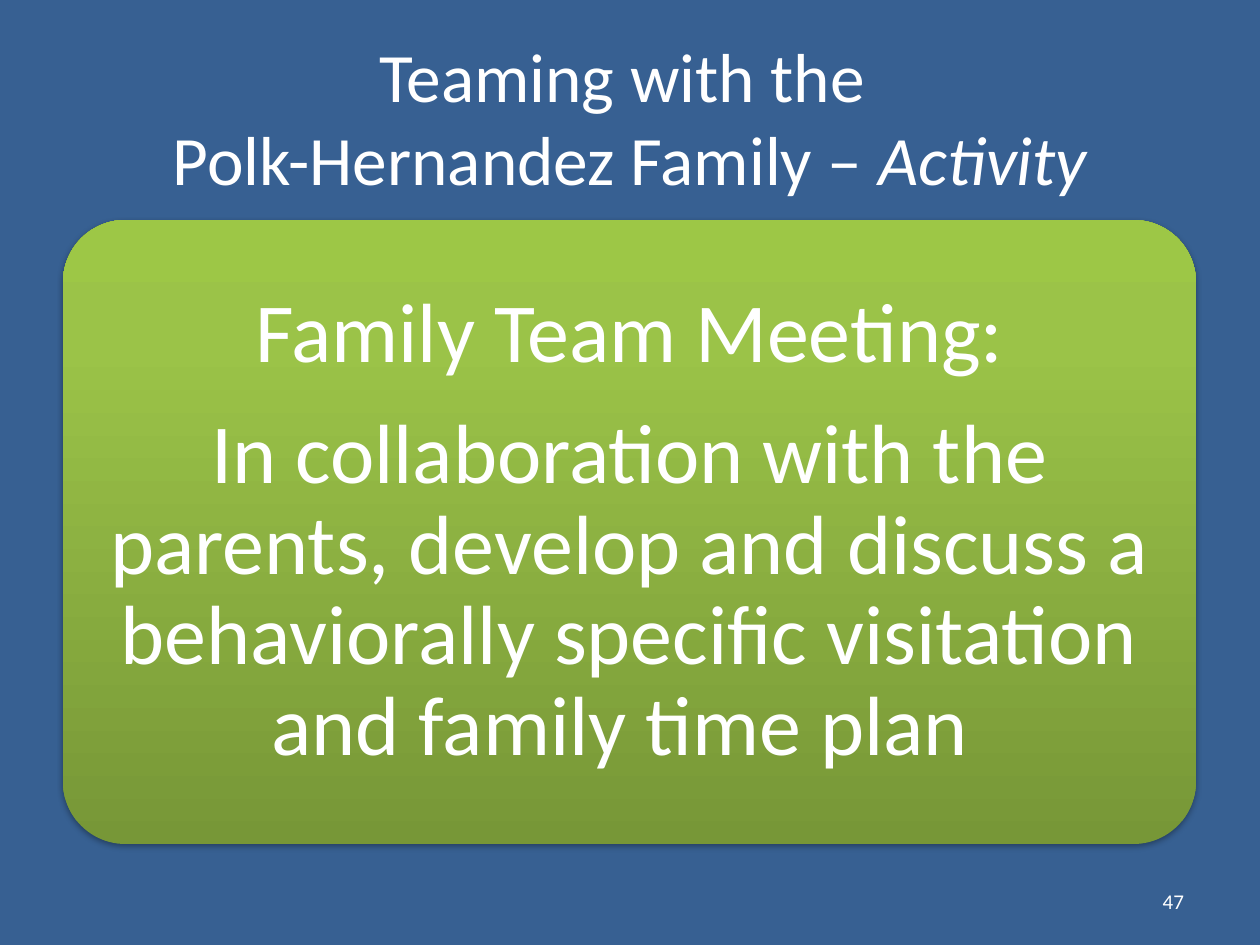
import pptx
import pptx.dml.color
import pptx.enum.shapes
import pptx.enum.text
import pptx.oxml
import pptx.oxml.ns
import pptx.util

PX = 914400 / 126
FONT = "Calibri"
COLORS = {
    "background": "376092",
    "text": "FFFFFF",
    "card_bottom": "779737",
    "card_middle": "9BC348",
    "card_top": "9DC746",
    "shadow": "000000",
}
CARD_STOPS = [(0, "card_bottom"), (80, "card_middle"), (100, "card_top")]
NAMESPACE = pptx.oxml.ns.nsdecls("a")


def emu(px):
    """Turn px into EMU."""
    return pptx.util.Emu(round(px * PX))


def rgb(name):
    """Look up a colour by name."""
    return pptx.dml.color.RGBColor.from_string(COLORS[name])


def place(shape, box):
    """Move and size a shape to a px box."""
    shape.left, shape.top, shape.width, shape.height = map(emu, box)


def prepare_frame(frame, inset_x, inset_y):
    """Set wrapping, middle anchoring and px insets of a text frame."""
    frame.word_wrap = True
    frame.auto_size = pptx.enum.text.MSO_AUTO_SIZE.NONE
    frame.vertical_anchor = pptx.enum.text.MSO_ANCHOR.MIDDLE
    frame.margin_left = frame.margin_right = emu(inset_x)
    frame.margin_top = frame.margin_bottom = emu(inset_y)


def add_run(paragraph, text, size, italic=None):
    """Add one white run to a paragraph."""
    run = paragraph.add_run()
    run.text = text
    run.font.name = FONT
    run.font.size = pptx.util.Pt(size)
    run.font.italic = italic
    run.font.color.rgb = rgb("text")


def write_title(slide, box):
    """Fill the title placeholder with the two-line heading."""
    title = slide.shapes.title
    place(title, box)
    prepare_frame(title.text_frame, 13, 6)
    heading = title.text_frame.paragraphs[0]
    heading.alignment = pptx.enum.text.PP_ALIGN.CENTER
    add_run(heading, "Teaming with the ", 39.6)
    heading.add_line_break()
    add_run(heading, "Polk-Hernandez Family – ", 39.6)
    add_run(heading, "Activity", 39.6, italic=True)


def style_card(card):
    """Give the card its green gradient and soft shadow."""
    card.fill.gradient()
    card.fill.gradient_angle = 90
    card.line.fill.background()
    card.shadow.inherit = False
    properties = card.element.spPr
    stops = properties.find(".//" + pptx.oxml.ns.qn("a:gsLst"))
    for stop in list(stops):
        stops.remove(stop)
    for position, name in CARD_STOPS:
        stops.append(pptx.oxml.parse_xml(
            f'<a:gs {NAMESPACE} pos="{position * 1000}">'
            f'<a:srgbClr val="{COLORS[name]}"/></a:gs>'))
    properties.find(pptx.oxml.ns.qn("a:effectLst")).append(pptx.oxml.parse_xml(
        f'<a:outerShdw {NAMESPACE} blurRad="40000" dist="23000" dir="5400000" rotWithShape="0">'
        f'<a:srgbClr val="{COLORS["shadow"]}"><a:alpha val="35000"/></a:srgbClr></a:outerShdw>'))


def add_meeting_card(slide, box, texts):
    """Draw the rounded card with its centred paragraphs."""
    left, top, width, height = box
    card = slide.shapes.add_shape(
        pptx.enum.shapes.MSO_SHAPE.ROUNDED_RECTANGLE, *map(emu, box))
    card.adjustments[0] = 0.1
    style_card(card)
    pad = 18
    message = slide.shapes.add_textbox(
        *map(emu, (left + pad, top + pad, width - 2 * pad, height - 2 * pad)))
    frame = message.text_frame
    prepare_frame(frame, 25, 25)
    for index, text in enumerate(texts):
        paragraph = frame.add_paragraph() if index else frame.paragraphs[0]
        paragraph.alignment = pptx.enum.text.PP_ALIGN.CENTER
        paragraph.line_spacing = 0.9
        paragraph.space_after = pptx.util.Pt(17)
        add_run(paragraph, text, 48)


def add_page_number(slide, box, number):
    """Write the page number at the right of its box."""
    page = slide.shapes.add_textbox(*map(emu, box))
    prepare_frame(page.text_frame, 13, 6)
    paragraph = page.text_frame.paragraphs[0]
    paragraph.alignment = pptx.enum.text.PP_ALIGN.RIGHT
    add_run(paragraph, number, 12)


def main():
    """Build and save the slide."""
    deck = pptx.Presentation()
    deck.slide_width, deck.slide_height = emu(1260), emu(945)
    slide = deck.slides.add_slide(deck.slide_layouts.get_by_name("Title Only"))
    slide.background.fill.solid()
    slide.background.fill.fore_color.rgb = rgb("background")
    write_title(slide, (63, 38, 1134, 157))
    add_meeting_card(slide, (63, 220, 1133, 624), [
        "Family Team Meeting:",
        "In collaboration with the parents, develop and discuss a "
        "behaviorally specific visitation and family time plan ",
    ])
    add_page_number(slide, (903, 876, 294, 50), "47")
    deck.save("out.pptx")


if __name__ == "__main__":
    main()
